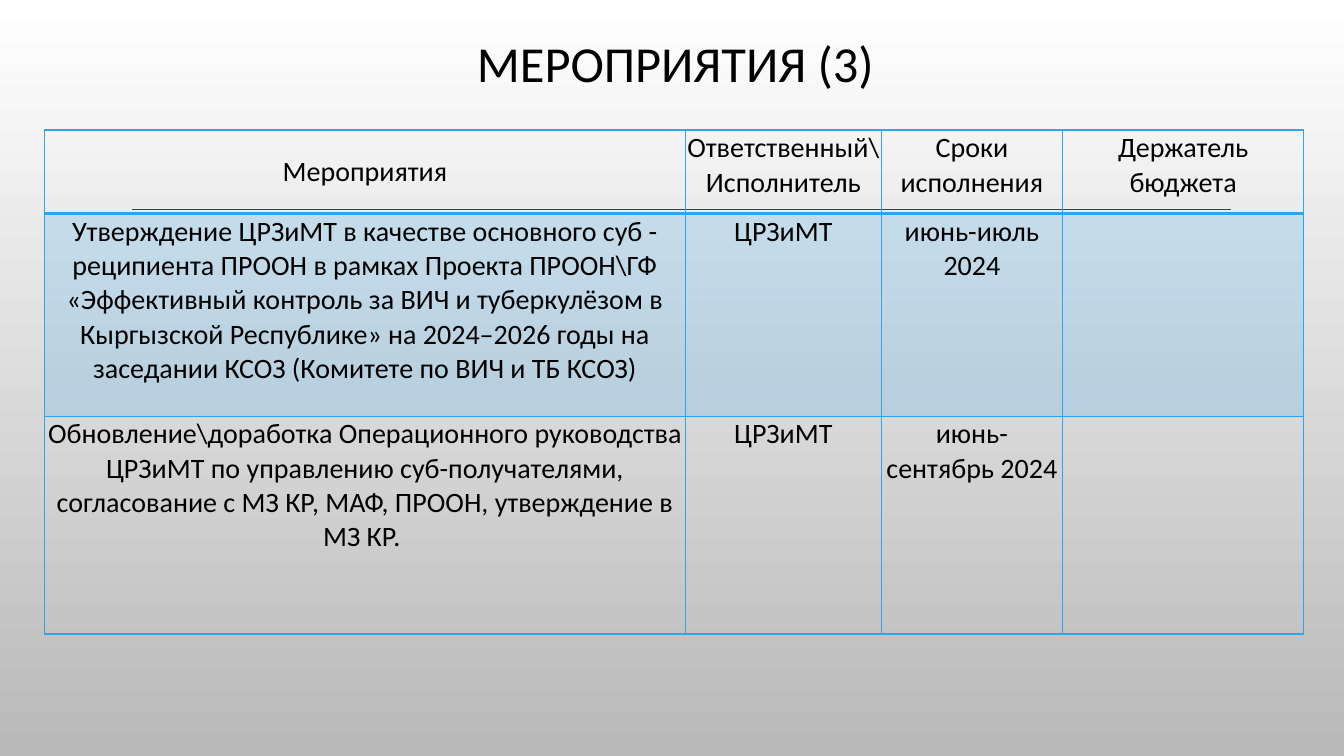
from dataclasses import dataclass

from lxml.etree import SubElement
from pptx import Presentation
from pptx.dml.color import RGBColor
from pptx.enum.shapes import MSO_CONNECTOR as Connector
from pptx.enum.text import MSO_ANCHOR as Anchor, PP_ALIGN as Align
from pptx.oxml.ns import qn
from pptx.slide import Slide
from pptx.table import _Cell as Cell
from pptx.text.text import _Paragraph as Paragraph
from pptx.util import Inches, Pt


@dataclass(frozen=True)
class Theme:
    font: str = "Calibri"
    title_size: int = 36
    body_size: int = 20
    text: str = "000000"
    accent: str = "2FA3EE"
    rule: str = "404040"
    page_top: str = "FFFFFF"
    page_bottom: str = "B9B9B9"
    tint_percent: int = 20


@dataclass(frozen=True)
class TableRow:
    height: float
    texts: tuple[str, str, str, str]
    tinted: bool = False


THEME = Theme()
COLUMN_WIDTHS = (6.36, 1.94, 1.8, 2.39)
ROWS = (
    TableRow(0.83, ("Мероприятия", "Ответственный\\Исполнитель", "Сроки исполнения", "Держатель бюджета")),
    TableRow(
        2.01,
        (
            "Утверждение ЦРЗиМТ в качестве основного суб - реципиента ПРООН в рамках "
            "Проекта ПРООН\\ГФ «Эффективный контроль за ВИЧ и туберкулёзом в Кыргызской "
            "Республике» на 2024–2026 годы на заседании КСОЗ (Комитете по ВИЧ и ТБ КСОЗ)",
            "ЦРЗиМТ",
            "июнь-июль 2024",
            "",
        ),
        tinted=True,
    ),
    TableRow(
        2.16,
        (
            "Обновление\\доработка Операционного руководства ЦРЗиМТ по управлению "
            "суб-получателями, согласование с МЗ КР, МАФ, ПРООН, утверждение в МЗ КР. ",
            "ЦРЗиМТ",
            "июнь-сентябрь 2024",
            "",
        ),
    ),
)


def style_paragraph(para: Paragraph, size: int) -> None:
    para.alignment = Align.CENTER
    para.font.name = THEME.font
    para.font.size = Pt(size)
    para.font.color.rgb = RGBColor.from_string(THEME.text)


def paint_background(page: Slide) -> None:
    fill = page.background.fill
    fill.gradient()
    fill.gradient_angle = 270
    for stop, color in zip(fill.gradient_stops, (THEME.page_top, THEME.page_bottom)):
        stop.color.rgb = RGBColor.from_string(color)


def add_rule(page: Slide) -> None:
    rule = page.shapes.add_connector(
        Connector.STRAIGHT, Inches(1.31), Inches(2.08), Inches(12.21), Inches(2.08)
    )
    rule.line.color.rgb = RGBColor.from_string(THEME.rule)
    rule.line.width = Pt(1)
    SubElement(rule._element.spPr, qn("a:effectLst"))


def add_title(page: Slide, text: str) -> None:
    box = page.shapes.add_textbox(Inches(1.2), Inches(0.31), Inches(11), Inches(0.7))
    frame = box.text_frame
    frame.word_wrap = True
    frame.vertical_anchor = Anchor.MIDDLE
    para = frame.paragraphs[0]
    para.text = text
    para.line_spacing = 0.9
    style_paragraph(para, THEME.title_size)


def set_borders(cell: Cell, top: int, bottom: int) -> None:
    properties = cell._tc.get_or_add_tcPr()
    for side, width in (("L", 1), ("R", 1), ("T", top), ("B", bottom)):
        line = SubElement(properties, qn(f"a:ln{side}"), w=str(Pt(width)))
        SubElement(SubElement(line, qn("a:solidFill")), qn("a:srgbClr"), val=THEME.accent)


def fill_cell(cell: Cell, tinted: bool) -> None:
    if not tinted:
        cell.fill.background()
        return
    cell.fill.solid()
    cell.fill.fore_color.rgb = RGBColor.from_string(THEME.accent)
    color = cell._tc.tcPr.find(f"{qn('a:solidFill')}/{qn('a:srgbClr')}")
    SubElement(color, qn("a:alpha"), val=str(THEME.tint_percent * 1000))


def add_activities(page: Slide) -> None:
    table = page.shapes.add_table(
        len(ROWS), len(COLUMN_WIDTHS), Inches(0.44), Inches(1.29),
        Inches(sum(COLUMN_WIDTHS)), Inches(sum(row.height for row in ROWS)),
    ).table
    table.first_row = False
    table.horz_banding = False
    for column, width in zip(table.columns, COLUMN_WIDTHS):
        column.width = Inches(width)
    for index, row in enumerate(ROWS):
        table.rows[index].height = Inches(row.height)
        for cell, text in zip(table.rows[index].cells, row.texts):
            cell.margin_left = cell.margin_right = cell.margin_top = Inches(0.01)
            cell.margin_bottom = 0
            set_borders(cell, top=2 if index == 1 else 1, bottom=2 if index == 0 else 1)
            fill_cell(cell, row.tinted)
            para = cell.text_frame.paragraphs[0]
            if text:
                para.text = text
            style_paragraph(para, THEME.body_size)
    table.cell(0, 0).vertical_anchor = Anchor.MIDDLE


def main() -> None:
    deck = Presentation()
    deck.slide_width, deck.slide_height = Inches(13.33), Inches(7.5)
    page = deck.slides.add_slide(deck.slide_layouts[6])
    paint_background(page)
    add_rule(page)
    add_title(page, "МЕРОПРИЯТИЯ (3)")
    add_activities(page)
    deck.save("out.pptx")


if __name__ == "__main__":
    main()
